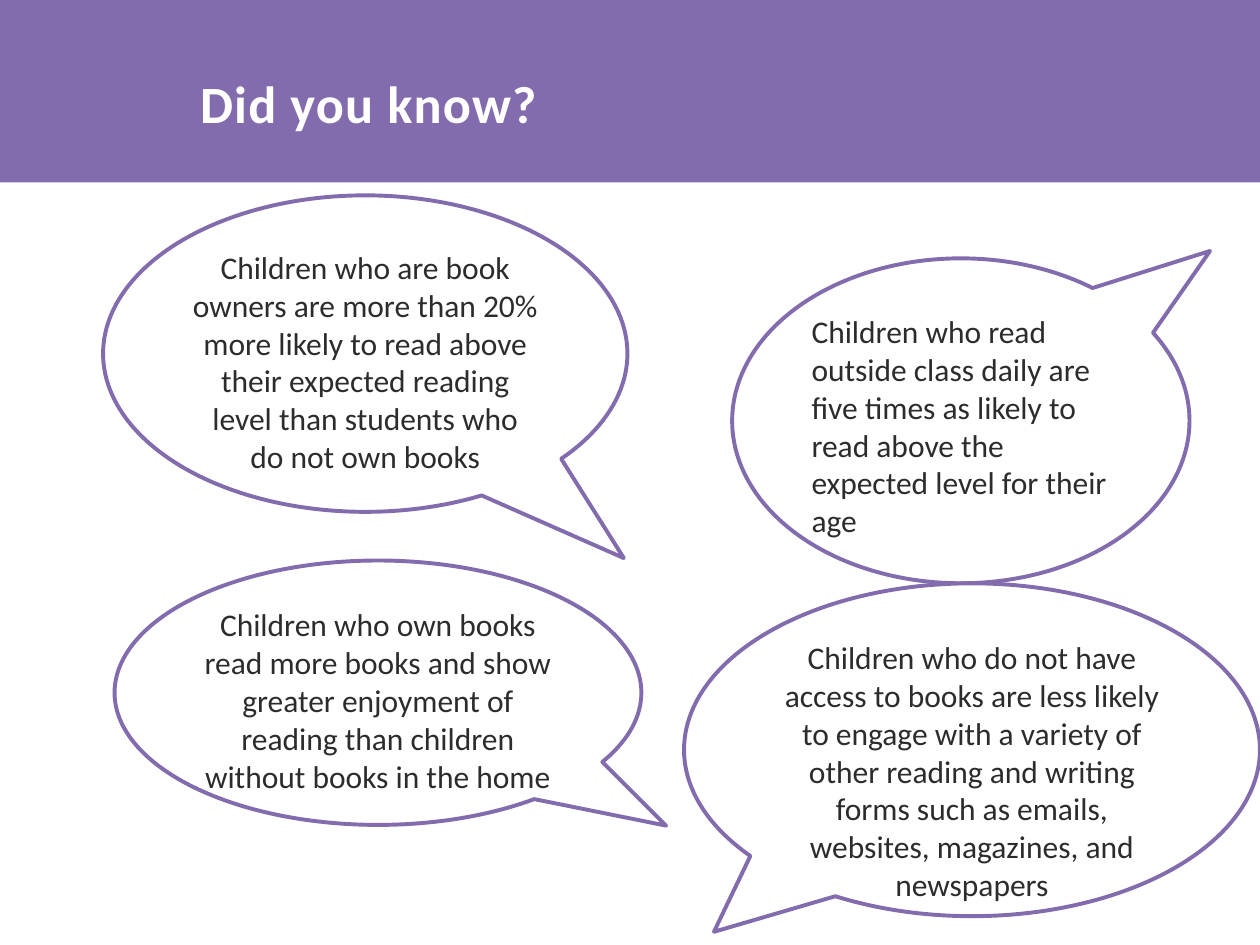
from pptx import Presentation
from pptx.dml.color import RGBColor
from pptx.enum.shapes import MSO_SHAPE
from pptx.enum.text import MSO_ANCHOR, MSO_AUTO_SIZE, PP_ALIGN
from pptx.util import Cm, Pt

PURPLE = RGBColor(0x82, 0x6C, 0xAE)
WHITE = RGBColor(0xFF, 0xFF, 0xFF)
CHARCOAL = RGBColor(0x2C, 0x2C, 0x2C)

TITLE_LAYOUT = 5

# Fact, box (left, top, width, height in cm), tail tip from centre, alignment
FACTS = [
    ("Children who read outside class daily are five times as likely to read "
     "above the expected level for their age",
     (14.76, 5.21, 9.22, 6.55), (0.545, -0.523), PP_ALIGN.LEFT),
    ("Children who own books read more books and show greater enjoyment of "
     "reading than children without books in the home",
     (2.31, 11.3, 10.62, 5.33), (0.547, 0.503), PP_ALIGN.CENTER),
    ("Children who do not have access to books are less likely to engage with "
     "a variety of other reading and writing forms such as emails, websites, "
     "magazines, and newspapers",
     (13.79, 11.76, 11.61, 6.71), (-0.448, 0.547), PP_ALIGN.CENTER),
    ("Children who are book owners are more than 20% more likely to read above "
     "their expected reading level than students who do not own books",
     (2.08, 3.94, 10.57, 6.38), (0.493, 0.646), PP_ALIGN.CENTER),
]


def write_text(frame, text, *, size, color, bold=False, align=PP_ALIGN.LEFT,
               anchor=MSO_ANCHOR.TOP, line_spacing=None, tracking=None):
    """Fill a text frame with one paragraph; tracking is in points."""
    frame.word_wrap = True
    frame.auto_size = MSO_AUTO_SIZE.NONE
    frame.vertical_anchor = anchor
    paragraph = frame.paragraphs[0]
    paragraph.alignment = align
    paragraph.line_spacing = line_spacing
    run = paragraph.add_run()
    run.text = text
    font = run.font
    font.name, font.size, font.bold = "Calibri", Pt(size), bold
    font.color.rgb = color
    if tracking:
        run._r.get_or_add_rPr().set("spc", str(round(tracking * 100)))


def add_filled_shape(slide, preset, box, fill):
    shape = slide.shapes.add_shape(preset, *map(Cm, box))
    shape.shadow.inherit = False
    shape.fill.solid()
    shape.fill.fore_color.rgb = fill
    return shape


def add_header(slide, box):
    """Place the purple band in the box and the title over it."""
    left, top, width, height = box
    band = add_filled_shape(slide, MSO_SHAPE.RECTANGLE, box, PURPLE)
    band.line.fill.background()

    title = slide.shapes.title
    title.left, title.top = Cm(left + 3.78), Cm(top)
    title.width, title.height = Cm(width - 5.54), Cm(height - 0.84)
    write_text(title.text_frame, "Did you know?", size=29.9, color=WHITE,
               bold=True, anchor=MSO_ANCHOR.BOTTOM, line_spacing=0.9,
               tracking=0.7)
    band._element.addnext(title._element)  # title in front of the band


def add_speech_bubble(slide, fact, box, tail, align):
    bubble = add_filled_shape(slide, MSO_SHAPE.OVAL_CALLOUT, box, WHITE)
    bubble.adjustments[0], bubble.adjustments[1] = tail
    bubble.line.color.rgb = PURPLE
    bubble.line.width = Pt(2.25)
    write_text(bubble.text_frame, fact, size=18, color=CHARCOAL, align=align)


def main():
    presentation = Presentation()
    presentation.slide_width, presentation.slide_height = Cm(25.4), Cm(19.05)
    slide = presentation.slides.add_slide(
        presentation.slide_layouts[TITLE_LAYOUT])
    add_header(slide, (0, -0.23, 25.4, 3.91))
    for fact in FACTS:
        add_speech_bubble(slide, *fact)
    presentation.save("out.pptx")


if __name__ == "__main__":
    main()
